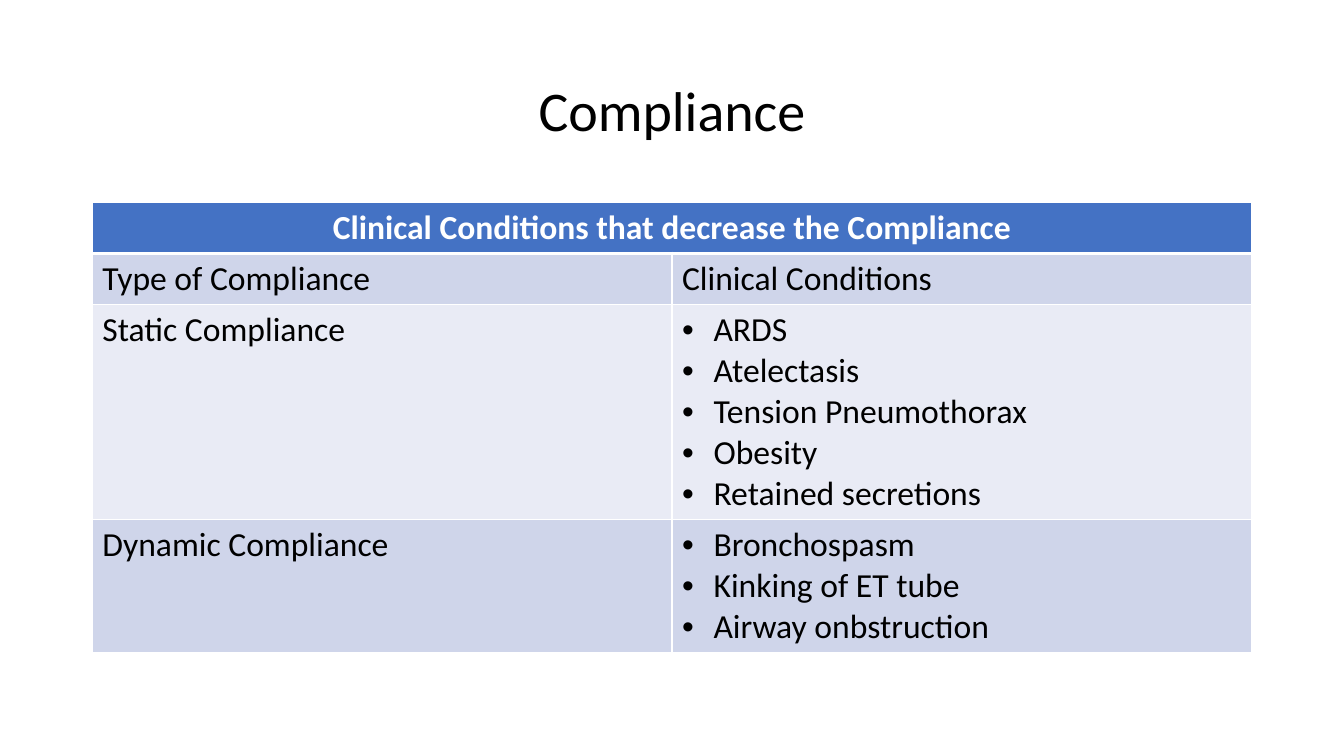
"""Build a slide with a table of conditions that decrease compliance."""
from dataclasses import dataclass

from lxml.etree import SubElement
from pptx import Presentation
from pptx.dml.color import RGBColor
from pptx.enum.text import MSO_ANCHOR, PP_ALIGN
from pptx.oxml import parse_xml
from pptx.oxml.ns import nsdecls, qn
from pptx.util import Pt


@dataclass(frozen=True)
class Theme:
    font: str = "Calibri"
    title_size: int = 40
    table_size: int = 24
    text: str = "000000"
    light: str = "FFFFFF"
    header: str = "4472C4"
    band_dark: str = "CFD5EA"
    band_light: str = "E9EBF5"


theme = Theme()


def write(para, text, size, color, bold=False, align=PP_ALIGN.LEFT):
    para.alignment = align
    span = para.add_run()
    span.text = text
    formats = {"name": theme.font, "size": Pt(size), "bold": bold}
    for name, value in formats.items():
        setattr(span.font, name, value)
    span.font.color.rgb = RGBColor.from_string(color)


def style_cell(cell, fill, widths):
    cell.fill.solid()
    cell.fill.fore_color.rgb = RGBColor.from_string(fill)
    properties = cell._tc.get_or_add_tcPr()
    for index, (side, width) in enumerate(widths.items()):
        border = parse_xml(
            f'<a:ln{side} {nsdecls("a")} w="{Pt(width)}"><a:solidFill>'
            f'<a:srgbClr val="{theme.light}"/></a:solidFill></a:ln{side}>'
        )
        properties.insert(index, border)


deck = Presentation()
deck.slide_width, deck.slide_height = Pt(960), Pt(540)
slide = deck.slides.add_slide(deck.slide_layouts[6])

box = slide.shapes.add_textbox(Pt(66), Pt(28.75), Pt(828), Pt(104.4))
frame_formats = {"word_wrap": True, "vertical_anchor": MSO_ANCHOR.MIDDLE}
for name, value in frame_formats.items():
    setattr(box.text_frame, name, value)
title = box.text_frame.paragraphs[0]
title.line_spacing = 0.9
write(title, "Compliance", theme.title_size, theme.text, align=PP_ALIGN.CENTER)

heading = "Clinical Conditions that decrease the Compliance"
rows = [
    ("Type of Compliance", ["Clinical Conditions"]),
    ("Static Compliance", ["ARDS", "Atelectasis", "Tension Pneumothorax", "Obesity", "Retained secretions"]),
    ("Dynamic Compliance", ["Bronchospasm", "Kinking of ET tube", "Airway onbstruction"]),
]
fills = [theme.header, theme.band_dark, theme.band_light, theme.band_dark]
line_counts = [1] + [len(conditions) for _, conditions in rows]
line_height, cell_margins = 29.3, 7.2
heights = [count * line_height + cell_margins for count in line_counts]

table = slide.shapes.add_table(
    len(heights), 2, Pt(66), Pt(144.5), Pt(828), Pt(sum(heights))
).table
table.horz_banding = False
for column in table.columns:
    column.width = Pt(414)
for index, (row, height, fill) in enumerate(zip(table.rows, heights, fills)):
    row.height = Pt(height)
    widths = {"L": 1, "R": 1, "T": 3 if index == 1 else 1, "B": 3 if index == 0 else 1}
    for cell in row.cells:
        style_cell(cell, fill, widths)

table.cell(0, 0).merge(table.cell(0, 1))
write(
    table.cell(0, 0).text_frame.paragraphs[0],
    heading, theme.table_size, theme.light, True, PP_ALIGN.CENTER,
)

for index, (kind, conditions) in enumerate(rows, start=1):
    write(table.cell(index, 0).text_frame.paragraphs[0], kind, theme.table_size, theme.text)
    frame = table.cell(index, 1).text_frame
    for position, condition in enumerate(conditions):
        para = frame.add_paragraph() if position else frame.paragraphs[0]
        write(para, condition, theme.table_size, theme.text)
        if len(conditions) > 1:
            properties = para._p.get_or_add_pPr()
            properties.set("marL", str(Pt(22.5)))
            properties.set("indent", str(-Pt(22.5)))
            SubElement(properties, qn("a:buFont"), typeface="Arial")
            SubElement(properties, qn("a:buChar"), char="•")

deck.save("out.pptx")
